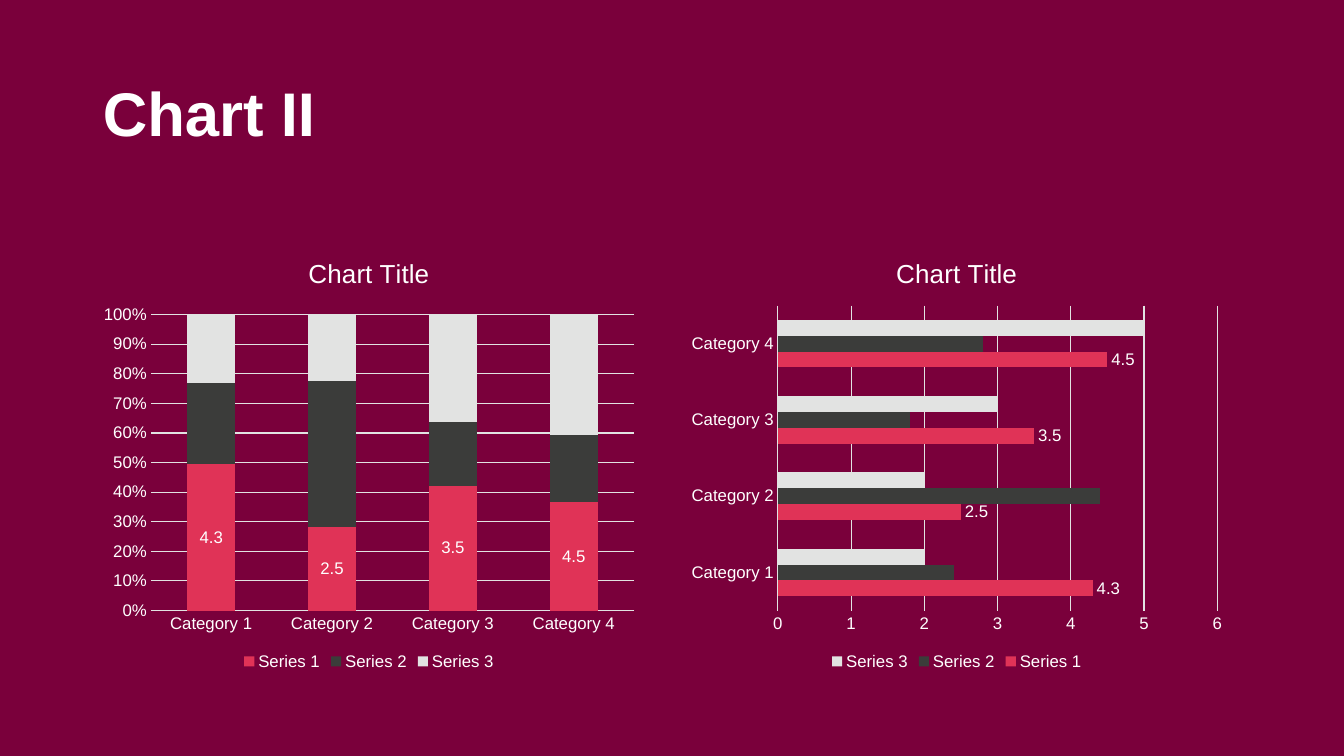
from pptx import Presentation
from pptx.chart.data import CategoryChartData
from pptx.dml.color import RGBColor
from pptx.enum.chart import XL_CHART_TYPE, XL_LABEL_POSITION, XL_LEGEND_POSITION, XL_TICK_MARK
from pptx.enum.text import MSO_ANCHOR, MSO_AUTO_SIZE, PP_ALIGN
from pptx.util import Inches, Pt

TITLE = "Chart II"
CHART_TITLE = "Chart Title"
CATEGORIES = ["Category 1", "Category 2", "Category 3", "Category 4"]
SERIES = [
    ("Series 1", (4.3, 2.5, 3.5, 4.5), "red"),
    ("Series 2", (2.4, 4.4, 1.8, 2.8), "charcoal"),
    ("Series 3", (2, 2, 3, 5), "silver"),
]
# chart type, gap width, overlap, label position, value axis format
CHARTS = [
    (XL_CHART_TYPE.COLUMN_STACKED_100, 150, 100, XL_LABEL_POSITION.CENTER, "0%"),
    (XL_CHART_TYPE.BAR_CLUSTERED, 182, 0, XL_LABEL_POSITION.OUTSIDE_END, "General"),
]
COLORS = {
    "background": "7A003B",
    "text": "FFFFFF",
    "red": "E03357",
    "charcoal": "3B3C3A",
    "silver": "E2E3E2",
}
FONT = "Arial"
MARGIN, CHART_TOP = 0.92, 2.36
CHART_WIDTH, CHART_HEIGHT, CHART_GAP = 5.48, 4.33, 0.35


def color(name):
    return RGBColor.from_string(COLORS[name])


def style_font(font, size, bold=False):
    font.name = FONT
    font.size = Pt(size)
    font.bold = bold
    font.color.rgb = color("text")


def style_line(line):
    line.color.rgb = color("silver")
    line.width = Pt(0.75)


def style_axes(chart, value_format):
    for axis in (chart.category_axis, chart.value_axis):
        axis.major_tick_mark = axis.minor_tick_mark = XL_TICK_MARK.NONE
        style_font(axis.tick_labels.font, 12)
    chart.category_axis.has_major_gridlines = False
    style_line(chart.category_axis.format.line)
    chart.value_axis.has_major_gridlines = True
    style_line(chart.value_axis.major_gridlines.format.line)
    chart.value_axis.format.line.fill.background()
    chart.value_axis.tick_labels.number_format = value_format
    chart.value_axis.tick_labels.number_format_is_linked = False


def add_series_chart(slide, left, kind, gap_width, overlap, label_position, value_format):
    data = CategoryChartData()
    data.categories = CATEGORIES
    for name, values, _ in SERIES:
        data.add_series(name, values)
    chart = slide.shapes.add_chart(
        kind, Inches(left), Inches(CHART_TOP), Inches(CHART_WIDTH), Inches(CHART_HEIGHT), data
    ).chart
    style_font(chart.font, 10)

    chart.has_title = True
    run = chart.chart_title.text_frame.paragraphs[0].add_run()
    run.text = CHART_TITLE
    style_font(run.font, 18.6)

    chart.has_legend = True
    chart.legend.position = XL_LEGEND_POSITION.BOTTOM
    chart.legend.include_in_layout = False
    style_font(chart.legend.font, 12)
    style_axes(chart, value_format)

    plot = chart.plots[0]
    plot.vary_by_categories = False
    plot.gap_width = gap_width
    plot.overlap = overlap
    for series, (_, _, fill) in zip(plot.series, SERIES):
        series.invert_if_negative = False
        series.format.fill.solid()
        series.format.fill.fore_color.rgb = color(fill)
    labels = plot.series[0].data_labels
    labels.show_value = True
    labels.position = label_position
    style_font(labels.font, 12)


def add_title(slide):
    title = slide.shapes.title
    title.left, title.top = Inches(MARGIN), Inches(0.78)
    title.width, title.height = Inches(9.77), Inches(1.45)
    frame = title.text_frame
    frame.word_wrap = True
    frame.auto_size = MSO_AUTO_SIZE.NONE
    frame.vertical_anchor = MSO_ANCHOR.TOP
    paragraph = frame.paragraphs[0]
    paragraph.alignment = PP_ALIGN.LEFT
    paragraph.line_spacing = 0.9
    run = paragraph.add_run()
    run.text = TITLE
    style_font(run.font, 44, bold=True)


def main():
    presentation = Presentation()
    presentation.slide_width, presentation.slide_height = Inches(13.33), Inches(7.5)
    slide = presentation.slides.add_slide(presentation.slide_layouts[5])
    slide.background.fill.solid()
    slide.background.fill.fore_color.rgb = color("background")
    for column, settings in enumerate(CHARTS):
        add_series_chart(slide, MARGIN + column * (CHART_WIDTH + CHART_GAP), *settings)
    add_title(slide)
    presentation.save("out.pptx")


if __name__ == "__main__":
    main()
